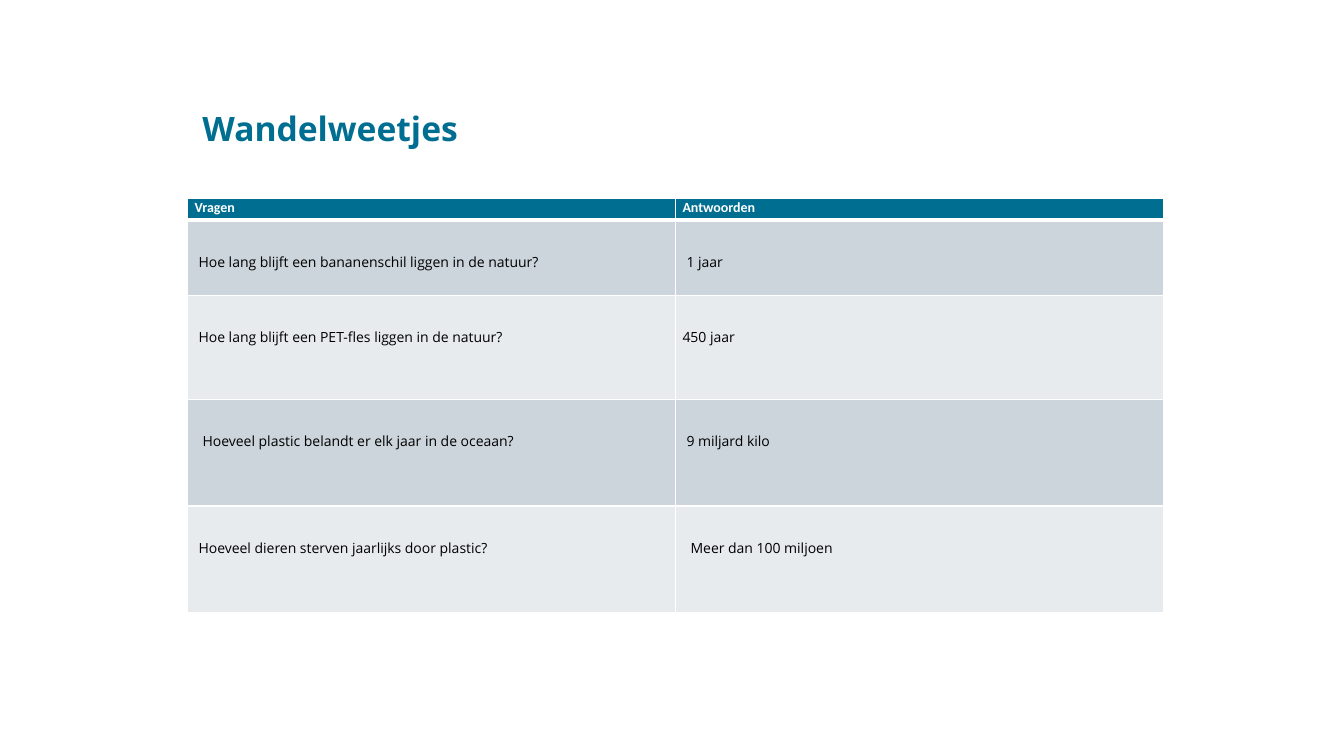
from dataclasses import dataclass

from lxml.etree import SubElement
from pptx import Presentation
from pptx.dml.color import RGBColor
from pptx.enum.text import MSO_AUTO_SIZE as AutoSize
from pptx.oxml.ns import qn
from pptx.util import Inches, Pt

COLORS = {
    "teal": "006E91",
    "white": "FFFFFF",
    "black": "000000",
    "dark_band": "CCD5DC",
    "light_band": "E7EBEE",
}
CELL_MARGIN = 0.07
INDENT_STEP = 0.04
QUESTION_TOP = 0.31


@dataclass
class Entry:
    text: str
    indent: int = 0


@dataclass
class QuizRow:
    question: Entry
    answer: Entry
    height: float


@dataclass
class TextStyle:
    font: str
    size: float
    color: str
    bold: bool = False


TITLE_STYLE = TextStyle("Open Sans", 24, "teal", True)
HEADER_STYLE = TextStyle("Calibri", 10, "white", True)
BODY_STYLE = TextStyle("Open Sans", 10, "black")

HEADER = QuizRow(Entry("Vragen"), Entry("Antwoorden"), 0.21)
QUIZ = [
    QuizRow(Entry("Hoe lang blijft een bananenschil liggen in de natuur?", 1),
            Entry("1 jaar", 1), 0.75),
    QuizRow(Entry("Hoe lang blijft een PET-fles liggen in de natuur?", 1),
            Entry("450 jaar"), 1.03),
    QuizRow(Entry("Hoeveel plastic belandt er elk jaar in de oceaan?", 2),
            Entry("9 miljard kilo", 1), 1.06),
    QuizRow(Entry("Hoeveel dieren sterven jaarlijks door plastic?", 1),
            Entry("Meer dan 100 miljoen", 2), 1.06),
]


def rgb(name: str) -> RGBColor:
    return RGBColor.from_string(COLORS[name])


def add_run(paragraph, text: str, style: TextStyle) -> None:
    run = paragraph.add_run()
    run.text = text
    run.font.name = style.font
    run.font.size = Pt(style.size)
    run.font.bold = style.bold
    run.font.color.rgb = rgb(style.color)


def set_borders(cell, bottom_width: float) -> None:
    properties = cell._tc.get_or_add_tcPr()
    widths = {"a:lnL": 1, "a:lnR": 1, "a:lnT": 1, "a:lnB": bottom_width}
    for tag, width in widths.items():
        line = SubElement(properties, qn(tag), w=str(Pt(width)))
        fill = SubElement(line, qn("a:solidFill"))
        SubElement(fill, qn("a:srgbClr"), val=COLORS["white"])


def fill_cell(cell, entry: Entry, style: TextStyle, fill: str,
              top: float, bottom_width: float) -> None:
    set_borders(cell, bottom_width)
    cell.fill.solid()
    cell.fill.fore_color.rgb = rgb(fill)
    cell.margin_left = Inches(CELL_MARGIN + INDENT_STEP * entry.indent)
    cell.margin_right = Inches(CELL_MARGIN)
    cell.margin_top = Inches(top)
    cell.margin_bottom = 0
    paragraph = cell.text_frame.paragraphs[0]
    paragraph.line_spacing = 1.07
    add_run(paragraph, entry.text, style)


def add_title(slide) -> None:
    box = slide.shapes.add_textbox(Inches(1.91), Inches(1.02), Inches(6.34), Inches(0.51))
    box.text_frame.word_wrap = True
    box.text_frame.auto_size = AutoSize.SHAPE_TO_FIT_TEXT
    add_run(box.text_frame.paragraphs[0], "Wandelweetjes", TITLE_STYLE)


def add_quiz_table(slide) -> None:
    rows = [HEADER, *QUIZ]
    height = sum(row.height for row in rows)
    table = slide.shapes.add_table(len(rows), 2, Inches(1.86), Inches(1.97),
                                   Inches(9.68), Inches(height)).table
    table.horz_banding = False
    for index, row in enumerate(rows):
        table.rows[index].height = Inches(row.height)
        if row is HEADER:
            style, fill, top, bottom_width = HEADER_STYLE, "teal", 0, 3
        else:
            fill = "dark_band" if index % 2 else "light_band"
            style, top, bottom_width = BODY_STYLE, QUESTION_TOP, 1
        for column, entry in enumerate((row.question, row.answer)):
            fill_cell(table.cell(index, column), entry, style, fill, top, bottom_width)


def main() -> None:
    presentation = Presentation()
    presentation.slide_width = Inches(13.33)
    presentation.slide_height = Inches(7.5)
    slide = presentation.slides.add_slide(presentation.slide_layouts[6])

    # Questions and answers
    add_quiz_table(slide)

    # Title
    add_title(slide)

    presentation.save("out.pptx")


if __name__ == "__main__":
    main()
